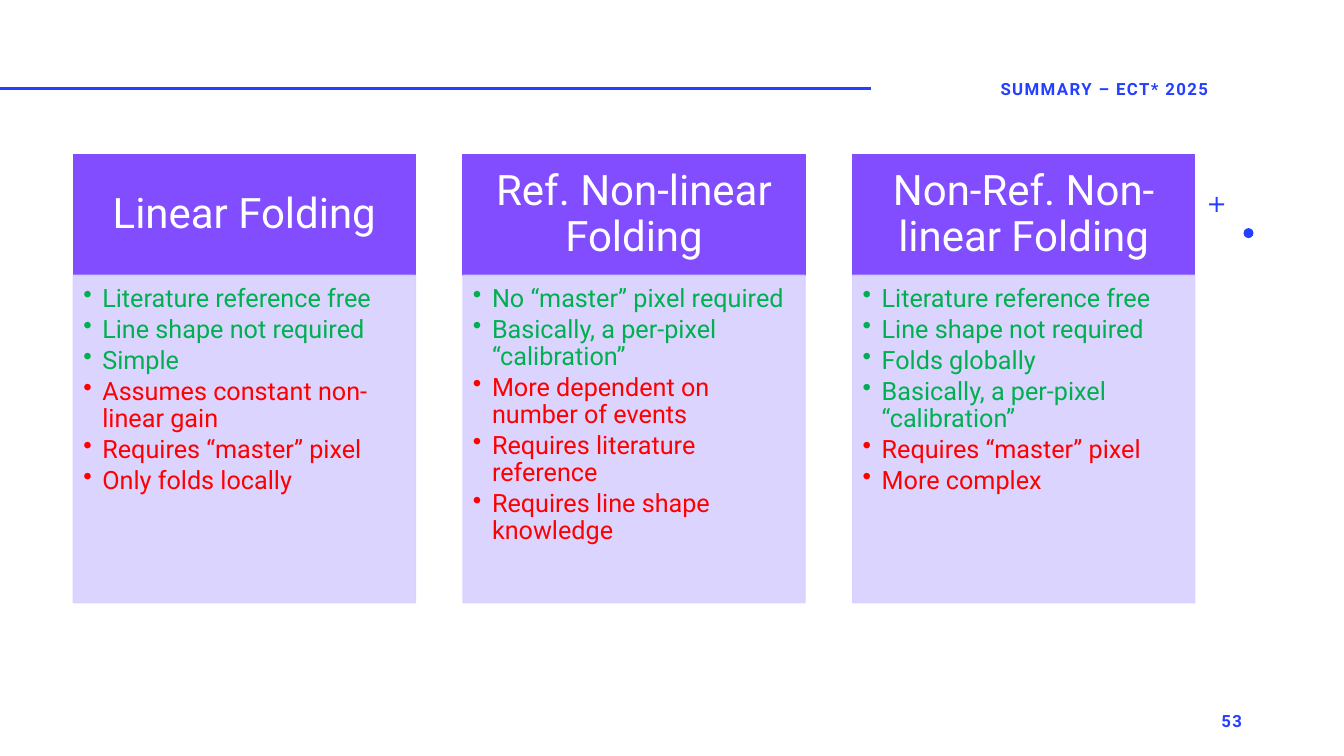
from pptx import Presentation
from pptx import util as u
from pptx.dml.color import RGBColor
from pptx.enum import shapes, text
from pptx.oxml.ns import qn
from lxml import etree

BLUE = RGBColor(0x24, 0x3F, 0xFF)
VIOLET = RGBColor(0x81, 0x4D, 0xFF)
LAVENDER = RGBColor(0xD8, 0xD0, 0xFF)
WHITE = RGBColor(0xFF, 0xFF, 0xFF)
GREEN = RGBColor(0x00, 0xB0, 0x50)
RED = RGBColor(0xFF, 0x00, 0x00)

METHODS = [
    ("Linear Folding",
     ["Literature reference free", "Line shape not required", "Simple"],
     ["Assumes constant non-linear gain", "Requires “master” pixel",
      "Only folds locally"]),
    ("Ref. Non-linear Folding",
     ["No “master” pixel required", "Basically, a per-pixel “calibration”"],
     ["More dependent on number of events", "Requires literature reference",
      "Requires line shape knowledge"]),
    ("Non-Ref. Non-linear Folding",
     ["Literature reference free", "Line shape not required",
      "Folds globally", "Basically, a per-pixel “calibration”"],
     ["Requires “master” pixel", "More complex"]),
]


def add_bullet(paragraph, indent):
    properties = paragraph._p.get_or_add_pPr()
    properties.set("marL", str(indent))
    properties.set("indent", str(-indent))
    etree.SubElement(properties, qn("a:buChar")).set("char", "•")


def write(paragraph, content, size, color, align=text.PP_ALIGN.LEFT,
          bold=False, tracking=0, line_spacing=None, space_after=0, bullet=None):
    paragraph.alignment = align
    paragraph.line_spacing = line_spacing
    paragraph.space_after = u.Pt(space_after)
    if bullet:
        add_bullet(paragraph, bullet)
    run = paragraph.add_run()
    run.text = content
    run.font.name = "Roboto"
    run.font.size = u.Pt(size)
    run.font.bold = bold
    run.font.color.rgb = color
    if tracking:
        run._r.get_or_add_rPr().set("spc", str(tracking * 100))


def set_frame(shape, anchor, margins=None):
    frame = shape.text_frame
    frame.word_wrap = True
    frame.vertical_anchor = anchor
    if margins:
        (frame.margin_left, frame.margin_top,
         frame.margin_right, frame.margin_bottom) = map(u.Cm, margins)
    return frame


def add_filled(slide, kind, box, color, outlined=False, opacity=100):
    shape = slide.shapes.add_shape(kind, *map(u.Cm, box))
    shape.shadow.inherit = False
    shape.fill.solid()
    shape.fill.fore_color.rgb = color
    if outlined:
        shape.line.color.rgb = color
        shape.line.width = u.Pt(1)
    else:
        shape.line.fill.background()
    if opacity < 100:
        for tint in shape._element.spPr.iter(qn("a:srgbClr")):
            etree.SubElement(tint, qn("a:alpha")).set("val", str(opacity * 1000))
    return shape


def add_label(slide, box, content, align):
    label = slide.shapes.add_textbox(*map(u.Cm, box))
    frame = set_frame(label, text.MSO_ANCHOR.MIDDLE)
    write(frame.paragraphs[0], content, 12, BLUE, align, bold=True, tracking=1)


def add_rule(slide, left, top, width):
    rule = slide.shapes.add_connector(
        shapes.MSO_CONNECTOR.STRAIGHT,
        u.Cm(left), u.Cm(top), u.Cm(left + width), u.Cm(top))
    rule.line.color.rgb = BLUE
    rule.line.width = u.Pt(2)
    etree.SubElement(rule._element.spPr, qn("a:effectLst"))


def add_ornament(slide, left, top):
    add_filled(slide, shapes.MSO_SHAPE.OVAL, (left + 0.87, top + 0.79, 0.25, 0.25), BLUE)
    plus = add_filled(slide, shapes.MSO_SHAPE.CROSS, (left, top, 0.38, 0.38), BLUE)
    plus.adjustments[0] = 0.43


def add_method(slide, left, top, width, height, title, strengths, weaknesses):
    header_height = 3.05
    header = add_filled(slide, shapes.MSO_SHAPE.RECTANGLE,
                        (left, top, width, header_height), VIOLET, outlined=True)
    frame = set_frame(header, text.MSO_ANCHOR.MIDDLE, (0.58, 0.33, 0.58, 0.33))
    write(frame.paragraphs[0], title, 30, WHITE, text.PP_ALIGN.CENTER,
          line_spacing=0.9)

    body = add_filled(slide, shapes.MSO_SHAPE.RECTANGLE,
                      (left, top + header_height, width, height - header_height),
                      LAVENDER, outlined=True, opacity=90)
    frame = set_frame(body, text.MSO_ANCHOR.TOP, (0.25, 0.25, 0.36, 0.41))
    points = [(point, GREEN) for point in strengths]
    points += [(point, RED) for point in weaknesses]
    for index, (point, color) in enumerate(points):
        paragraph = frame.add_paragraph() if index else frame.paragraphs[0]
        write(paragraph, point, 18, color, line_spacing=0.9,
              space_after=2.7, bullet=u.Cm(0.48))


def main():
    presentation = Presentation()
    presentation.slide_width = u.Cm(33.87)
    presentation.slide_height = u.Cm(19.05)
    slide = presentation.slides.add_slide(presentation.slide_layouts[6])

    add_rule(slide, 0, 2.24, 21.95)
    add_ornament(slide, 30.47, 4.96)
    add_label(slide, (22.12, 1.74, 11.43, 1.02), "SUMMARY – ECT* 2025",
              text.PP_ALIGN.CENTER)
    add_label(slide, (23.93, 17.65, 7.62, 1.02), "53", text.PP_ALIGN.RIGHT)
    for column, method in enumerate(METHODS):
        add_method(slide, 1.85 + column * 9.82, 3.89, 8.62, 11.3, *method)

    presentation.save("out.pptx")


if __name__ == "__main__":
    main()
